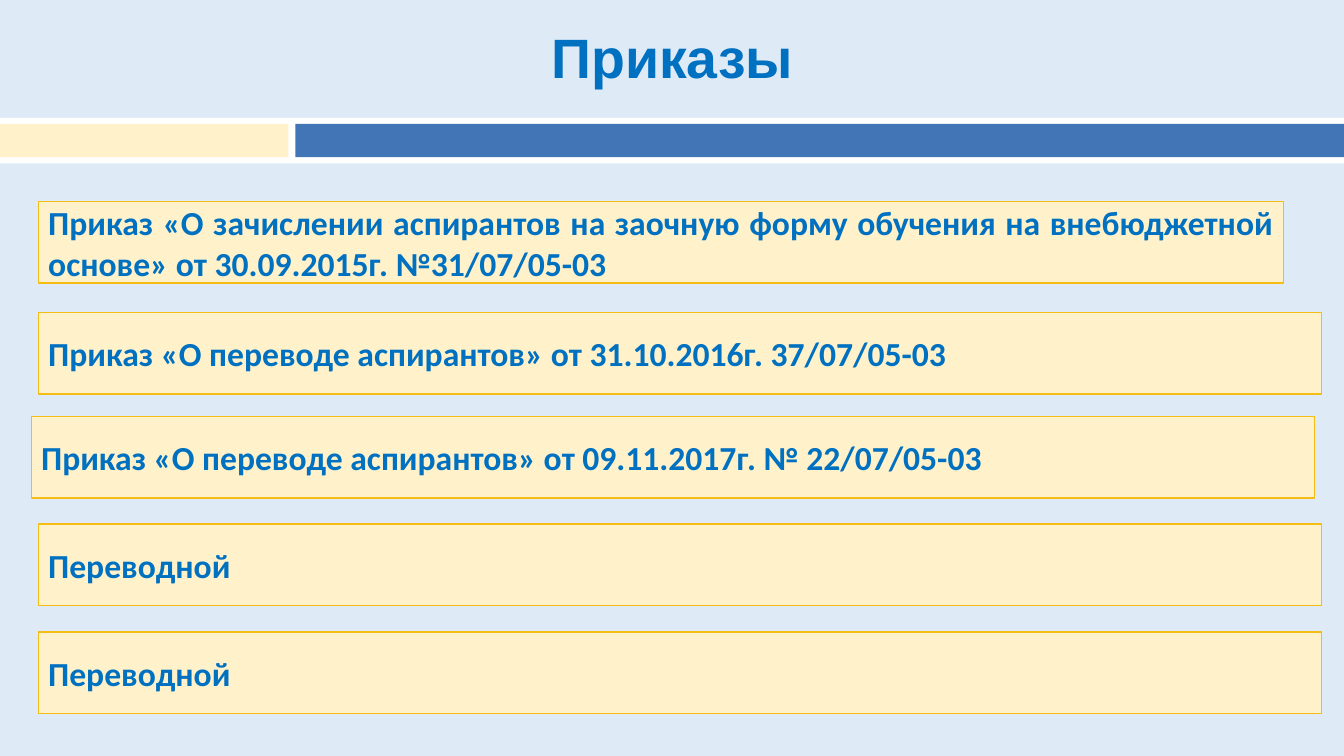
from pptx import Presentation
from pptx.dml.color import RGBColor
from pptx.enum.shapes import MSO_SHAPE
from pptx.enum.text import MSO_ANCHOR, PP_ALIGN
from pptx.util import Inches, Pt

RECT = MSO_SHAPE.RECTANGLE
MIDDLE = MSO_ANCHOR.MIDDLE
LEFT, CENTER, JUSTIFY = PP_ALIGN.LEFT, PP_ALIGN.CENTER, PP_ALIGN.JUSTIFY

WIDTH, HEIGHT = 13.33, 7.5
BACKGROUND, WHITE, BLUE = "DEEBF7", "FFFFFF", "4175B5"
CREAM, GOLD, TEXT_BLUE = "FFF2CB", "F5BD14", "0070C0"

# Text, alignment, left, top and width of each order
ORDERS = [
    ("Приказ «О зачислении аспирантов на заочную форму обучения на "
     "внебюджетной основе» от 30.09.2015г. №31/07/05-03",
     JUSTIFY, 0.38, 2, 12.35),
    ("Приказ «О переводе аспирантов» от 31.10.2016г. 37/07/05-03",
     LEFT, 0.38, 3.1, 12.73),
    ("Приказ «О переводе аспирантов» от 09.11.2017г. № 22/07/05-03",
     LEFT, 0.31, 4.13, 12.73),
    ("Переводной", LEFT, 0.38, 5.2, 12.73),
    ("Переводной", LEFT, 0.38, 6.27, 12.73),
]
ORDER_HEIGHT = 0.81


def color(value):
    return RGBColor.from_string(value)


def add_rect(slide, box, fill, line=None):
    sp = slide.shapes.add_shape(RECT, *map(Inches, box))
    sp.shadow.inherit = False
    sp.fill.solid()
    sp.fill.fore_color.rgb = color(fill)
    if line:
        sp.line.color.rgb = color(line)
        sp.line.width = Pt(1)
    else:
        sp.line.fill.background()
    return sp


def write(sp, text, font, size, align):
    tf = sp.text_frame
    tf.word_wrap = True
    tf.vertical_anchor = MIDDLE
    p = tf.paragraphs[0]
    p.text = text
    p.alignment = align
    p.font.name = font
    p.font.size = Pt(size)
    p.font.bold = True
    p.font.color.rgb = color(TEXT_BLUE)
    return p


def add_title(slide, box, text):
    sp = slide.shapes.add_textbox(*map(Inches, box))
    write(sp, text, "Arial", 39.6, CENTER).line_spacing = 0.9


def add_band(slide, box):
    """White strip with a short cream bar and a long blue bar."""
    left, top, width, height = box
    edge, gap = 0.06, 0.07
    cream_width = 2.86
    blue_offset = cream_width + gap
    bar_top, bar_height = top + edge, height - 2 * edge
    add_rect(slide, box, WHITE)
    add_rect(slide, (left + blue_offset, bar_top, width - blue_offset, bar_height), BLUE)
    add_rect(slide, (left, bar_top, cream_width, bar_height), CREAM)


def add_order(slide, box, text, align):
    write(add_rect(slide, box, CREAM, GOLD), text, "Calibri", 24, align)


def main():
    prs = Presentation()
    prs.slide_width, prs.slide_height = Inches(WIDTH), Inches(HEIGHT)
    slide = prs.slides.add_slide(prs.slide_layouts[6])
    slide.background.fill.solid()
    slide.background.fill.fore_color.rgb = color(BACKGROUND)

    # Heading
    add_title(slide, (2.41, 0.26, 8.52, 0.68), "Приказы")
    add_band(slide, (0, 1.17, WIDTH, 0.45))

    # List of orders
    for text, align, left, top, width in ORDERS:
        add_order(slide, (left, top, width, ORDER_HEIGHT), text, align)

    prs.save("out.pptx")


if __name__ == "__main__":
    main()
